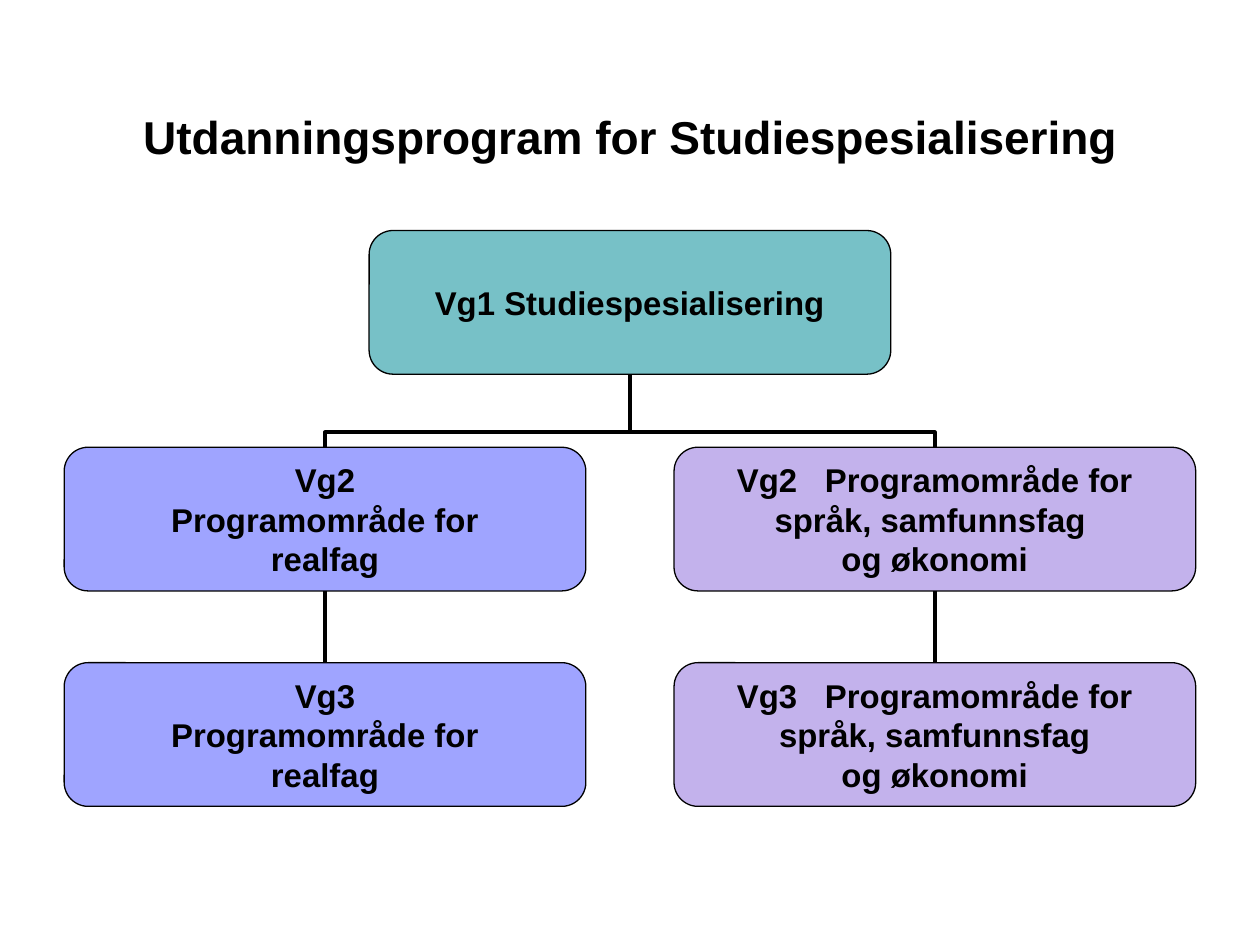
import pptx
import pptx.util
import pptx.dml.color
import pptx.enum.shapes
import pptx.enum.text
import pptx.oxml.ns
import lxml.etree
from pptx.util import Inches

BOX_WIDTH, BOX_HEIGHT = 4.14, 1.14
LEFT_COLUMN, MIDDLE_COLUMN, RIGHT_COLUMN = 0.51, 2.93, 5.35
FIRST_ROW, SECOND_ROW, THIRD_ROW = 1.83, 3.55, 5.26
TOP, BOTTOM = 0, 2
SCIENCE_LINES = ["Programområde for", "realfag"]
WIDE_GAP = 10.5
TEAL, BLUE, PURPLE, BLACK = "77C1C7", "9FA4FF", "C3B2EC", "000000"


def color(value):
    return pptx.dml.color.RGBColor.from_string(value)


def add_span(para, text, size, spacing=0):
    span = para.add_run()
    span.text = text
    span.font.name = "Arial"
    span.font.size = pptx.util.Pt(size)
    span.font.bold = True
    span.font.color.rgb = color(BLACK)
    if spacing:
        span.font._element.set("spc", str(int(spacing * 100)))


def write_lines(frame, lines, size):
    for index, line in enumerate(lines):
        para = frame.paragraphs[0] if index == 0 else frame.add_paragraph()
        para.alignment = pptx.enum.text.PP_ALIGN.CENTER
        if isinstance(line, tuple):
            level, name = line
            add_span(para, level, size)
            add_span(para, " ", size, WIDE_GAP)
            add_span(para, name, size)
        else:
            add_span(para, line, size)


def add_title(page, text):
    box = page.shapes.add_textbox(Inches(0.5), Inches(0.81), Inches(9), Inches(0.58))
    box.text_frame.word_wrap = True
    write_lines(box.text_frame, [text], 26.3)


def add_box(page, left, top, fill, lines):
    box = page.shapes.add_shape(
        pptx.enum.shapes.MSO_SHAPE.ROUNDED_RECTANGLE,
        Inches(left), Inches(top), Inches(BOX_WIDTH), Inches(BOX_HEIGHT))
    box.shadow.inherit = False
    box.fill.solid()
    box.fill.fore_color.rgb = color(fill)
    box.line.color.rgb = color(BLACK)
    box.line.width = pptx.util.Pt(0.75)
    frame = box.text_frame
    frame.margin_left = frame.margin_right = frame.margin_top = frame.margin_bottom = 0
    frame.word_wrap = False
    frame.vertical_anchor = pptx.enum.text.MSO_ANCHOR.MIDDLE
    write_lines(frame, lines, 18.8)
    return box


def join_boxes(page, child, parent, kind):
    link = page.shapes.add_connector(kind, 0, 0, 0, 0)
    link.begin_connect(child, TOP)
    link.end_connect(parent, BOTTOM)
    link.line.color.rgb = color(BLACK)
    link.line.width = pptx.util.Pt(2.25)
    lxml.etree.SubElement(link._element.spPr, pptx.oxml.ns.qn("a:effectLst"))
    return link


def add_straight_link(page, child, parent):
    join_boxes(page, child, parent, pptx.enum.shapes.MSO_CONNECTOR.STRAIGHT)


def add_elbow_link(page, child, parent):
    link = join_boxes(page, child, parent, pptx.enum.shapes.MSO_CONNECTOR.ELBOW)
    from_right = link.begin_x > link.end_x
    center_x = (link.begin_x + link.end_x) // 2
    center_y = (link.begin_y + link.end_y) // 2
    link.width, link.height = link.height, link.width
    link.left = center_x - link.width // 2
    link.top = center_y - link.height // 2
    frame = link._element.spPr.find(pptx.oxml.ns.qn("a:xfrm"))
    frame.set("rot", str((90 if from_right else 270) * 60000))
    frame.set("flipH", "1" if from_right else "0")
    frame.set("flipV", "0")
    geometry = link._element.spPr.find(pptx.oxml.ns.qn("a:prstGeom"))
    guides = geometry.find(pptx.oxml.ns.qn("a:avLst"))
    lxml.etree.SubElement(guides, pptx.oxml.ns.qn("a:gd"), name="adj1", fmla="val 20500")


def main():
    deck = pptx.Presentation()
    deck.slide_width, deck.slide_height = Inches(10), Inches(7.5)
    page = deck.slides.add_slide(deck.slide_layouts[6])
    add_title(page, "Utdanningsprogram for Studiespesialisering")
    root = add_box(page, MIDDLE_COLUMN, FIRST_ROW, TEAL, ["Vg1 Studiespesialisering"])
    branches = [
        (LEFT_COLUMN, BLUE, ["Vg2"] + SCIENCE_LINES, ["Vg3"] + SCIENCE_LINES),
        (RIGHT_COLUMN, PURPLE,
         [("Vg2", "Programområde for"), "språk, samfunnsfag ", "og økonomi"],
         [("Vg3", "Programområde for"), "språk, samfunnsfag", "og økonomi"]),
    ]
    for left, fill, second_lines, third_lines in branches:
        second = add_box(page, left, SECOND_ROW, fill, second_lines)
        third = add_box(page, left, THIRD_ROW, fill, third_lines)
        add_elbow_link(page, second, root)
        add_straight_link(page, third, second)
    deck.save("out.pptx")


if __name__ == "__main__":
    main()
